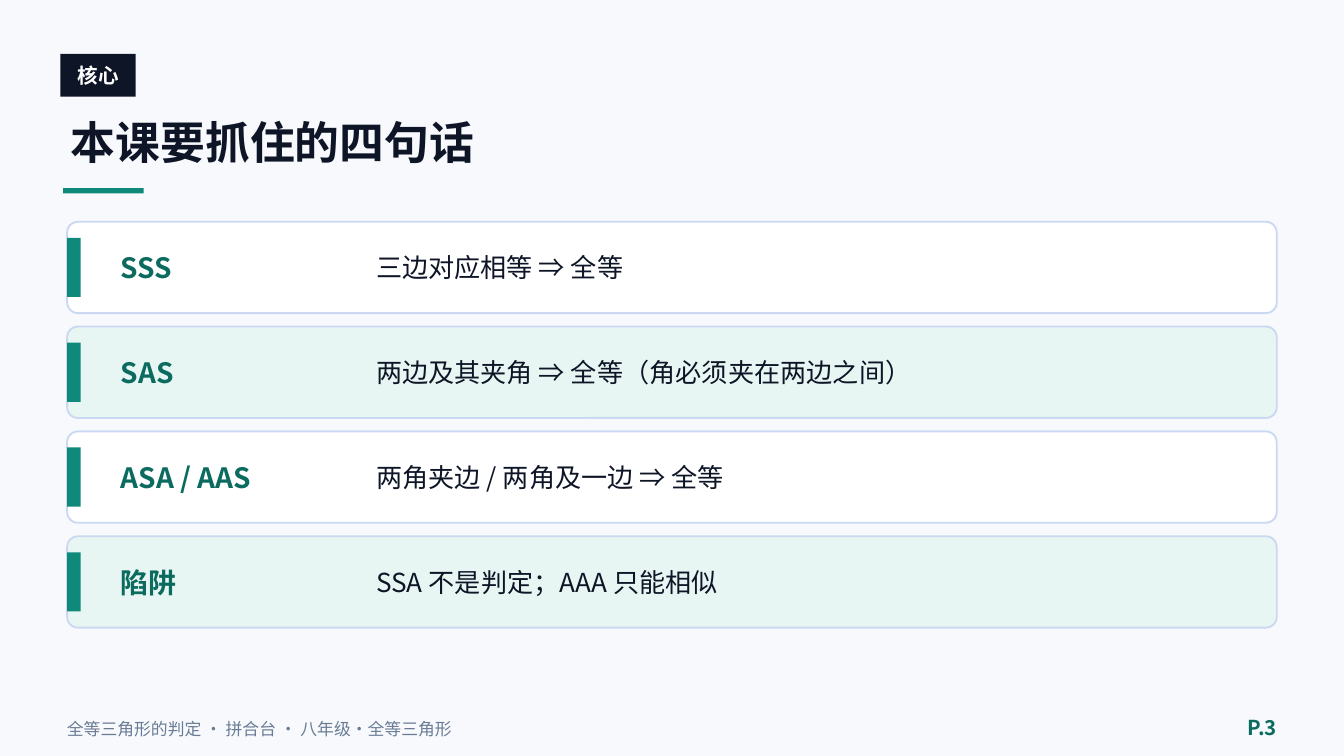
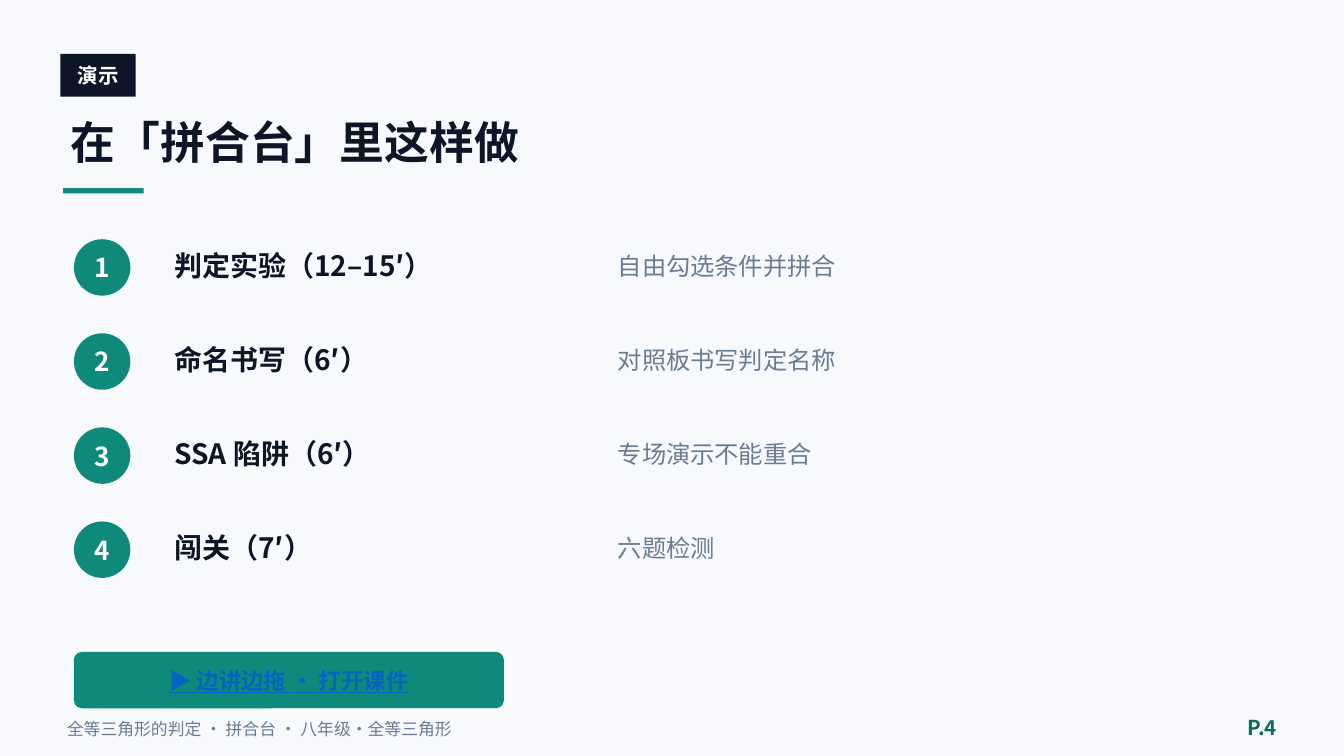
from lxml.etree import SubElement
from pptx import Presentation
from pptx.dml.color import RGBColor
from pptx.enum.shapes import MSO_SHAPE
from pptx.enum.text import MSO_ANCHOR, PP_ALIGN
from pptx.oxml.ns import qn
from pptx.util import Inches, Pt

# Content
RULES = [
    ("SSS", "三边对应相等 ⇒ 全等"),
    ("SAS", "两边及其夹角 ⇒ 全等（角必须夹在两边之间）"),
    ("ASA / AAS", "两角夹边 / 两角及一边 ⇒ 全等"),
    ("陷阱", "SSA 不是判定；AAA 只能相似"),
]
STEPS = [
    ("判定实验（12–15′）", "自由勾选条件并拼合"),
    ("命名书写（6′）", "对照板书写判定名称"),
    ("SSA 陷阱（6′）", "专场演示不能重合"),
    ("闯关（7′）", "六题检测"),
]
BUTTON = "▶ 边讲边拖 · 打开课件"
FOOTER = "全等三角形的判定 · 拼合台 · 八年级·全等三角形"

# Look
FONT = "Noto Sans CJK SC"
COLORS = {
    "page": "F7F9FC", "ink": "0D1526", "teal": "0F8A7A", "deep": "0A6B5E",
    "mint": "E8F6F3", "white": "FFFFFF", "edge": "CBD8F2", "gray": "6A7C95",
    "link": "0563C1",
}
STYLES = {
    "tag": {"size": 11, "color": "white", "bold": True},
    "title": {"size": 24, "color": "ink", "bold": True},
    "key": {"size": 15, "color": "deep", "bold": True},
    "rule": {"size": 14, "color": "ink"},
    "num": {"size": 14, "color": "white", "bold": True},
    "step": {"size": 15, "color": "ink", "bold": True},
    "hint": {"size": 13, "color": "gray"},
    "button": {"size": 12, "color": "link", "bold": True, "underline": True},
    "foot": {"size": 9, "color": "gray"},
    "page": {"size": 11, "color": "deep", "bold": True},
}


def tint(name):
    return RGBColor.from_string(COLORS[name])


def add_box(slide, kind, at, fill, line=None, radius=None):
    box = slide.shapes.add_shape(kind, *map(Inches, at))
    box.shadow.inherit = False
    box.fill.solid()
    box.fill.fore_color.rgb = tint(fill)
    if line:
        box.line.color.rgb = tint(line)
        box.line.width = Pt(1)
    else:
        box.line.fill.background()
    if radius:
        box.adjustments[0] = radius / min(at[2:])
    return box


def add_text(slide, at, text, style, align=PP_ALIGN.LEFT):
    frame = slide.shapes.add_textbox(*map(Inches, at)).text_frame
    frame.word_wrap = True
    frame.vertical_anchor = MSO_ANCHOR.MIDDLE
    para = frame.paragraphs[0]
    para.alignment = align
    run = para.add_run()
    run.text = text
    look = dict(STYLES[style])
    run.font.color.rgb = tint(look.pop("color"))
    look["size"] = Pt(look["size"])
    for key, value in look.items():
        setattr(run.font, key, value)
    run.font.name = FONT
    SubElement(run.font._element, qn("a:ea"), typeface=FONT)


def add_page(deck, tag, title):
    """Start a slide with its tag, title and title bar."""
    slide = deck.slides.add_slide(deck.slide_layouts[6])
    slide.background.fill.solid()
    slide.background.fill.fore_color.rgb = tint("page")
    add_box(slide, MSO_SHAPE.RECTANGLE, (0.45, 0.4, 0.56, 0.32), "ink")
    add_text(slide, (0.45, 0.39, 0.56, 0.34), tag, "tag", PP_ALIGN.CENTER)
    add_text(slide, (0.43, 0.78, 9, 0.55), title, "title")
    add_box(slide, MSO_SHAPE.RECTANGLE, (0.47, 1.4, 0.6, 0.04), "teal")
    return slide


def add_foot(slide, number):
    add_text(slide, (0.4, 5.28, 7.2, 0.28), FOOTER, "foot")
    add_text(slide, (9, 5.26, 0.6, 0.3), f"P.{number}", "page", PP_ALIGN.RIGHT)


def add_rules(slide):
    """Stack the cards, white and mint in turn."""
    high, gap, inset = 0.68, 0.1, 0.12
    for i, (key, rule) in enumerate(RULES):
        top = 1.65 + i * (high + gap)
        fill = ("white", "mint")[i % 2]
        add_box(slide, MSO_SHAPE.ROUNDED_RECTANGLE, (0.5, top, 9, high), fill, "edge", 0.08)
        add_box(slide, MSO_SHAPE.RECTANGLE, (0.5, top + inset, 0.1, high - 2 * inset), "teal")
        add_text(slide, (0.8, top, 1.8, high), key, "key")
        add_text(slide, (2.7, top, 6.5, high), rule, "rule")


def add_steps(slide):
    """List the numbered steps above the button."""
    dot, pitch = 0.42, 0.7
    for i, (step, hint) in enumerate(STEPS):
        top = 1.7 + i * pitch
        disc = (0.55, top + 0.08, dot, dot)
        add_box(slide, MSO_SHAPE.OVAL, disc, "teal")
        add_text(slide, disc, str(i + 1), "num", PP_ALIGN.CENTER)
        add_text(slide, (1.2, top, 3.2, 0.55), step, "step")
        add_text(slide, (4.5, top, 5, 0.55), hint, "hint")
    bar = (0.55, 4.85, 3.2, 0.42)
    add_box(slide, MSO_SHAPE.ROUNDED_RECTANGLE, bar, "teal", radius=0.06)
    add_text(slide, bar, BUTTON, "button", PP_ALIGN.CENTER)


PAGES = [
    ("核心", "本课要抓住的四句话", add_rules),
    ("演示", "在「拼合台」里这样做", add_steps),
]


def main():
    deck = Presentation()
    # Wide 16:9 page
    deck.slide_width = Inches(10)
    deck.slide_height = deck.slide_width * 9 // 16
    for number, (tag, title, fill) in enumerate(PAGES, 3):
        slide = add_page(deck, tag, title)
        fill(slide)
        add_foot(slide, number)
    deck.save("out.pptx")


if __name__ == "__main__":
    main()
